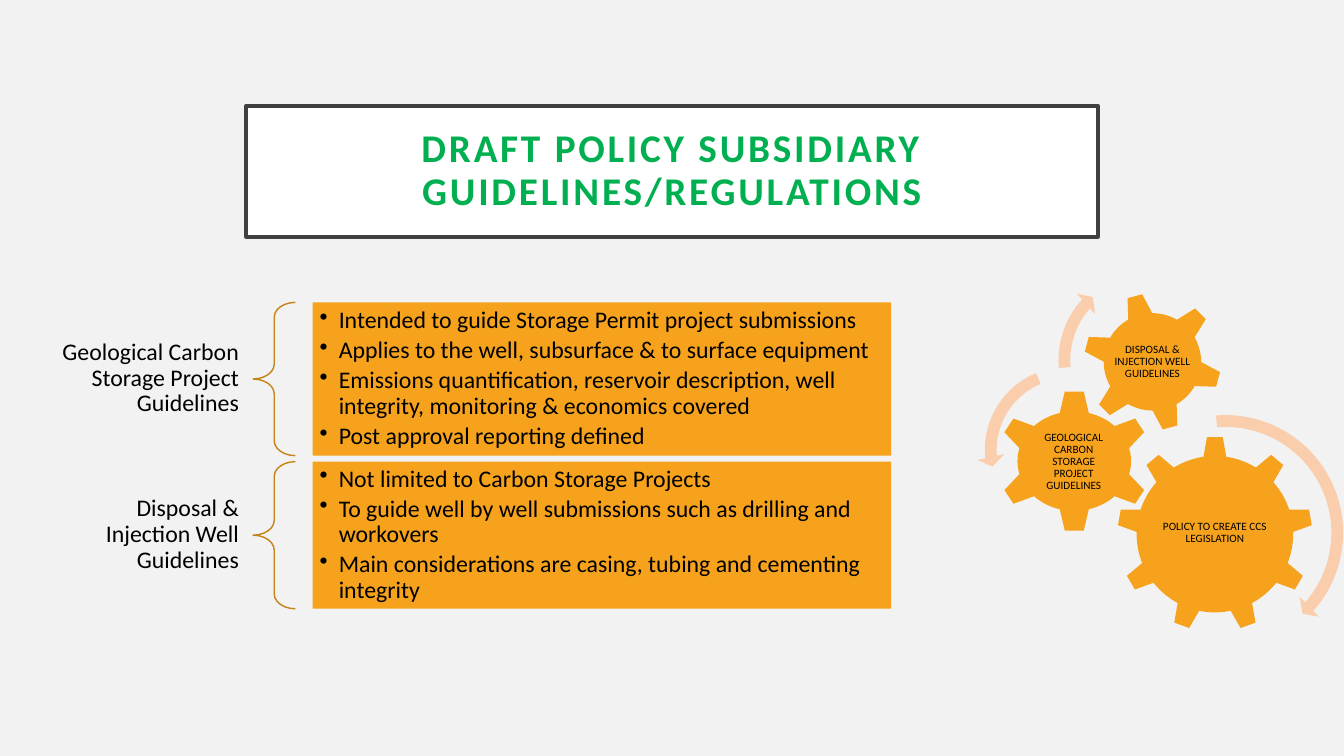
from lxml.etree import SubElement
from pptx import Presentation
from pptx.dml.color import RGBColor
from pptx.enum.shapes import MSO_SHAPE
from pptx.enum.text import MSO_ANCHOR, PP_ALIGN
from pptx.oxml.ns import qn
from pptx.util import Pt

PX = 9144  # 100 px to the inch
PAPER = RGBColor(0xF2, 0xF2, 0xF2)
WHITE = RGBColor(0xFF, 0xFF, 0xFF)
BLACK = RGBColor(0x00, 0x00, 0x00)
FRAME = RGBColor(0x40, 0x40, 0x40)
GREEN = RGBColor(0x00, 0xB0, 0x50)
ORANGE = RGBColor(0xF6, 0xA2, 0x1D)
BROWN = RGBColor(0xC5, 0x82, 0x17)
PEACH = RGBColor(0xFA, 0xCE, 0xAC)


def draw(kind, box, fill=None, adjust=()):
    """Add a preset shape without shadow or line."""
    shape = slide.shapes.add_shape(kind, *[n * PX for n in box])
    shape.shadow.inherit = False
    shape.line.fill.background()
    if fill is None:
        shape.fill.background()
    else:
        shape.fill.solid()
        shape.fill.fore_color.rgb = fill
    for i, value in enumerate(adjust):
        shape.adjustments[i] = value
    return shape


def write(shape, lines, size, align, pad, color=BLACK, bullet=False):
    """Fill a shape with paragraphs; pad is the side and the top inset."""
    frame = shape.text_frame
    frame.word_wrap = True
    frame.vertical_anchor = MSO_ANCHOR.MIDDLE
    frame.margin_left = frame.margin_right = pad[0] * PX
    frame.margin_top = frame.margin_bottom = pad[1] * PX
    for i, line in enumerate(lines):
        para = frame.add_paragraph() if i else frame.paragraphs[0]
        if bullet:
            props = para._p.get_or_add_pPr()
            props.set("marL", str(19 * PX))
            props.set("indent", str(-19 * PX))
            SubElement(props, qn("a:buChar"), char="•")
            para.space_after = Pt(3)
        para.alignment = align
        para.line_spacing = 0.9
        run = para.add_run()
        run.text = line
        run.font.name = "Calibri"
        run.font.size = Pt(size)
        run.font.color.rgb = color


deck = Presentation()
deck.slide_width, deck.slide_height = 1333 * PX, 750 * PX
slide = deck.slides.add_slide(deck.slide_layouts[5])
slide.background.fill.solid()
slide.background.fill.fore_color.rgb = PAPER

# Title
title = slide.shapes.title
title.left, title.top = 244 * PX, 105 * PX
title.width, title.height = 845 * PX, 130 * PX
title.fill.solid()
title.fill.fore_color.rgb = WHITE
title.line.color.rgb = FRAME
title.line.width = Pt(2.5)
write(title, ["DRAFT POLICY SUBSIDIARY GUIDELINES/REGULATIONS"], 28,
      PP_ALIGN.CENTER, (20, 20), GREEN)
head = title.text_frame.paragraphs[0].runs[0]
head.font.bold = True
head.font._element.set("spc", "200")

# Guidelines: label, brace and bullet panel
guides = [
    (300, 152, "Geological Carbon Storage Project Guidelines", [
        "Intended to guide Storage Permit project submissions",
        "Applies to the well, subsurface & to surface equipment",
        "Emissions quantification, reservoir description, well integrity, "
        "monitoring & economics covered",
        "Post approval reporting defined"]),
    (458, 146, "Disposal & Injection Well Guidelines", [
        "Not limited to Carbon Storage Projects",
        "To guide well by well submissions such as drilling and workovers",
        "Main considerations are casing, tubing and cementing integrity"]),
]
for top, high, name, points in guides:
    label = slide.shapes.add_textbox(
        39 * PX, (top + high // 2 - 43) * PX, 211 * PX, 85 * PX)
    write(label, [name], 17, PP_ALIGN.RIGHT, (13, 5))
    brace = draw(MSO_SHAPE.LEFT_BRACE, (251, top, 42, high),
                 adjust=(0.35, 0.5))
    brace.line.color.rgb = BROWN
    brace.line.width = Pt(1)
    panel = draw(MSO_SHAPE.RECTANGLE, (310, top, 574, high), ORANGE)
    write(panel, points, 17, PP_ALIGN.LEFT, (7, 7), bullet=True)

# Gears with upright captions
gears = [
    (MSO_SHAPE.GEAR_9, (1108, 433, 194, 194), 0, (1147, 479, 116, 100),
     "POLICY TO CREATE CCS LEGISLATION"),
    (MSO_SHAPE.GEAR_6, (988, 387, 155, 141), 0, (1025, 423, 80, 70),
     "GEOLOGICAL CARBON STORAGE PROJECT GUIDELINES"),
    (MSO_SHAPE.GEAR_6, (1074, 290, 138, 138), 345, (1104, 320, 78, 78),
     "DISPOSAL & INJECTION WELL GUIDELINES"),
]
for kind, box, turn, area, name in gears:
    draw(kind, box, ORANGE).rotation = turn
    label = slide.shapes.add_textbox(*[n * PX for n in area])
    write(label, [name], 8, PP_ALIGN.CENTER, (1, 1))

# Arrows around the gears
arrows = [
    (MSO_SHAPE.CIRCULAR_ARROW, (1091, 404, 249, 249),
     (0.047, 2.99, 24.878, 159.238, 0.055)),
    (MSO_SHAPE.LEFT_CIRCULAR_ARROW, (969, 356, 181, 181),
     (0.065, 4.3, 104.891, 148.378, 0.075)),
    (MSO_SHAPE.CIRCULAR_ARROW, (1042, 260, 195, 195),
     (0.06, 3.941, 133.138, 105.082, 0.07)),
]
for kind, box, adjust in arrows:
    draw(kind, box, PEACH, adjust)

deck.save("out.pptx")
